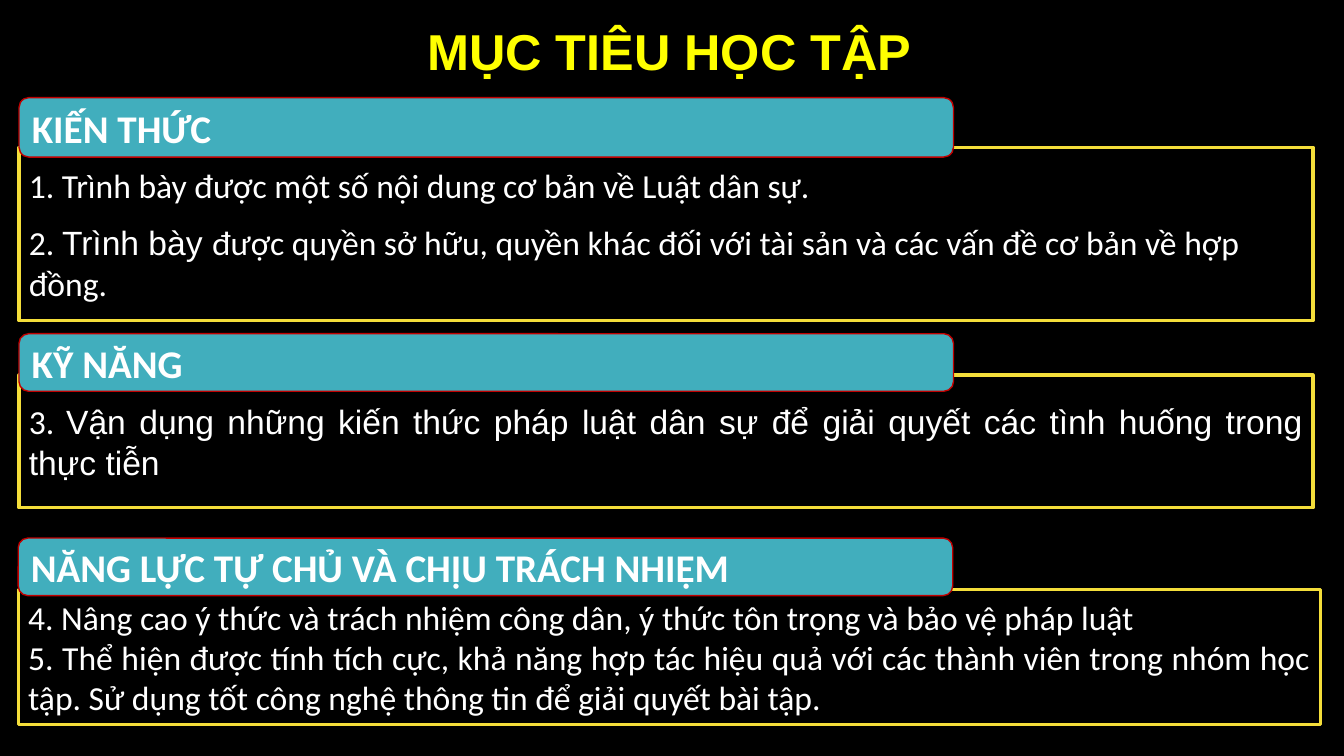
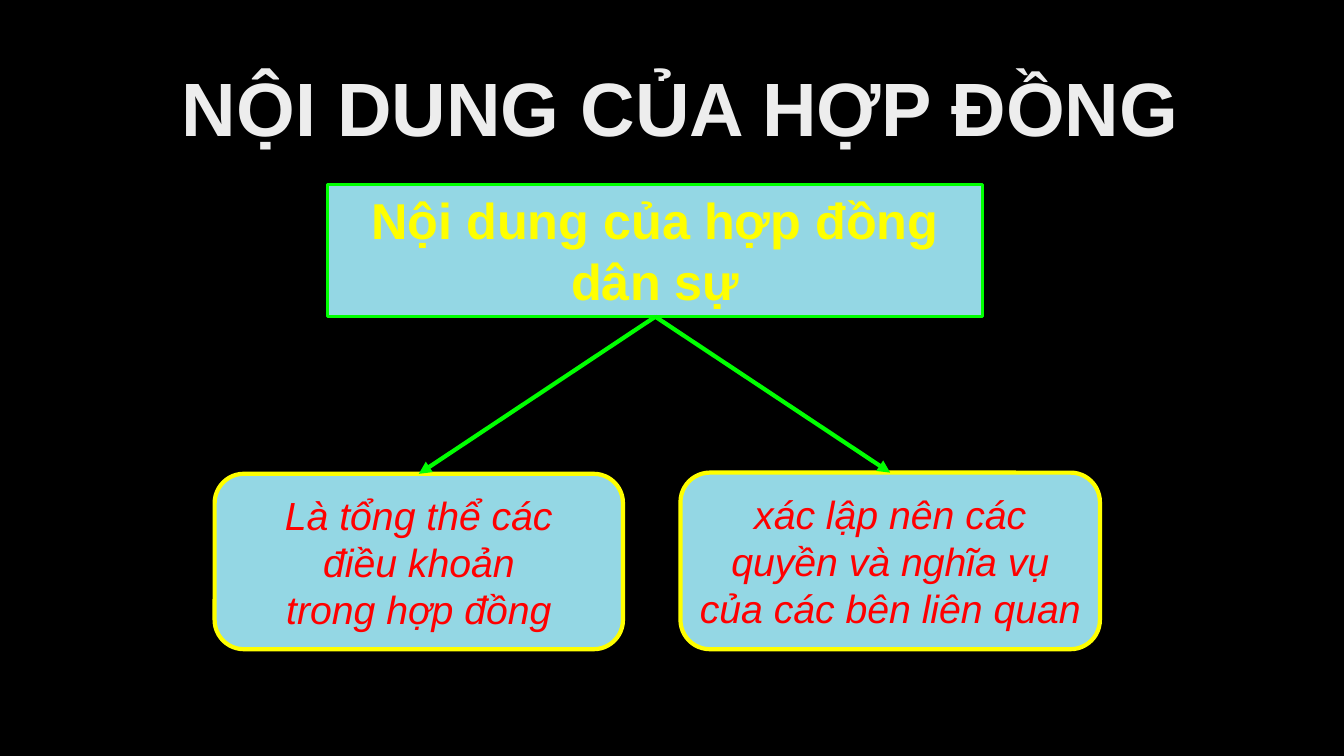
import dataclasses

import lxml.etree
import pptx
import pptx.dml.color
import pptx.enum.shapes
import pptx.enum.text
import pptx.oxml.ns
import pptx.util

Cm, Pt = pptx.util.Cm, pptx.util.Pt
ALIGN = pptx.enum.text.PP_ALIGN
ANCHOR = pptx.enum.text.MSO_ANCHOR
SHAPE = pptx.enum.shapes.MSO_SHAPE
TITLE_ONLY = 5


@dataclasses.dataclass(frozen=True)
class Theme:
    background: str = "000000"
    white: str = "FFFFFF"
    silver: str = "EDEDED"
    yellow: str = "FFFF00"
    gold: str = "F4DE3A"
    teal: str = "41AEBD"
    dark_red: str = "C00000"
    red: str = "FF0000"
    light_blue: str = "94D7E4"
    green: str = "00FF00"
    heading_font: str = "Arial"
    body_font: str = "Calibri"
    large_title: int = 54
    title: int = 36
    label: int = 28
    body: int = 24


THEME = Theme()


def rgb(value):
    return pptx.dml.color.RGBColor.from_string(value)


def write_text(tf, paragraphs, *, size, color, font=THEME.body_font, bold=False,
               italic=False, align=ALIGN.LEFT, anchor=ANCHOR.MIDDLE, wrap=True,
               gap=0, line_spacing=None):
    """Each paragraph is a list of runs: a string, or a (string, font) pair."""
    tf.word_wrap = wrap
    tf.vertical_anchor = anchor
    for i, runs in enumerate(paragraphs):
        p = tf.add_paragraph() if i else tf.paragraphs[0]
        p.alignment = align
        p.space_before = Pt(gap if i else 0)
        p.space_after = Pt(gap)
        if line_spacing:
            p.line_spacing = line_spacing
        for run in runs:
            text, run_font = (run, font) if isinstance(run, str) else run
            r = p.add_run()
            r.text = text
            r.font.name, r.font.size = run_font, Pt(size)
            r.font.bold, r.font.italic = bold, italic
            r.font.color.rgb = rgb(color)


def add_box(s, kind, box, line, width, fill=None):
    sp = s.shapes.add_shape(kind, *map(Cm, box))
    sp.shadow.inherit = False
    if fill:
        sp.fill.solid()
        sp.fill.fore_color.rgb = rgb(fill)
    else:
        sp.fill.background()
    sp.line.color.rgb = rgb(line)
    sp.line.width = Pt(width)
    return sp


def add_arrow(s, parent, child):
    """Arrow from the bottom of the parent to the top of the child."""
    line = s.shapes.add_connector(pptx.enum.shapes.MSO_CONNECTOR.STRAIGHT, 0, 0, 0, 0)
    line.begin_connect(parent, 2)
    line.end_connect(child, 0)
    line.line.color.rgb = rgb(THEME.green)
    line.line.width = Pt(3)
    qn = pptx.oxml.ns.qn
    lxml.etree.SubElement(line.line._get_or_add_ln(), qn("a:tailEnd"), type="triangle")
    lxml.etree.SubElement(line._element.spPr, qn("a:effectLst"))


def add_titled_slide(prs, title, box, size, color):
    s = prs.slides.add_slide(prs.slide_layouts[TITLE_ONLY])
    sp = s.shapes.title
    sp.left, sp.top, sp.width, sp.height = map(Cm, box)
    write_text(sp.text_frame, [[title]], size=size, color=color, bold=True,
               font=THEME.heading_font, align=ALIGN.CENTER, line_spacing=0.9)
    return s


def add_objective(s, box, overlap, heading, paragraphs, tab_height=1.45, **text_format):
    """Framed text with a heading tab overlapping its top edge."""
    left, top, _, _ = box
    frame = add_box(s, SHAPE.RECTANGLE, box, THEME.gold, 2.25)
    write_text(frame.text_frame, paragraphs, size=THEME.body, color=THEME.white,
               **text_format)
    tab_box = (left, top + overlap - tab_height, 23.55, tab_height)
    tab = add_box(s, SHAPE.ROUNDED_RECTANGLE, tab_box, THEME.dark_red, 1, THEME.teal)
    write_text(tab.text_frame, [[heading]], size=THEME.label, color=THEME.white, bold=True)


def build_objectives(prs):
    s = add_titled_slide(prs, "MỤC TIÊU HỌC TẬP", (2.34, 0.48, 29.06, 1.75),
                         THEME.title, THEME.yellow)
    arial = THEME.heading_font

    # Knowledge
    add_objective(s, (0.48, 3.71, 32.61, 4.37), 0.25, "KIẾN THỨC", [
        ["1. Trình bày được một số nội dung cơ bản về Luật dân sự."],
        ["2. ", ("Trình bày ", arial), "được quyền sở hữu, quyền khác đối với tài sản "
         "và các vấn đề cơ bản về hợp đồng."],
    ], tab_height=1.5, gap=6)

    # Skills
    add_objective(s, (0.48, 9.45, 32.61, 3.35), 0.41, "KỸ NĂNG", [
        ["3. ", ("Vận dụng những kiến thức pháp luật dân sự để giải quyết "
                 "các tình huống trong thực tiễn", arial)],
    ], align=ALIGN.JUSTIFY)

    # Autonomy and responsibility
    add_objective(s, (0.46, 14.86, 32.82, 3.4), 0.15, "NĂNG LỰC TỰ CHỦ VÀ CHỊU TRÁCH NHIỆM", [
        ["4. Nâng cao ý thức và trách nhiệm công dân, ý thức tôn trọng và bảo vệ pháp luật"],
        ["5. Thể hiện được tính tích cực, khả năng hợp tác hiệu quả với các thành viên "
         "trong nhóm học tập. Sử dụng tốt công nghệ thông tin để giải quyết bài tập."],
    ], align=ALIGN.JUSTIFY)


def add_branch(s, root, box, lines):
    """Rounded box below the root, joined to it by an arrow."""
    sp = add_box(s, SHAPE.ROUNDED_RECTANGLE, box, THEME.yellow, 3, THEME.light_blue)
    write_text(sp.text_frame, [[line] for line in lines], size=THEME.label,
               color=THEME.red, font=THEME.heading_font, italic=True,
               align=ALIGN.CENTER, wrap=False)
    add_arrow(s, root, sp)


def build_contract_content(prs):
    s = add_titled_slide(prs, "NỘI DUNG CỦA HỢP ĐỒNG", (2.54, 0.97, 29.21, 3.68),
                         THEME.large_title, THEME.silver)

    # Root of the diagram
    root = add_box(s, SHAPE.RECTANGLE, (8.26, 4.65, 16.51, 3.33), THEME.green, 2.25,
                   THEME.light_blue)
    write_text(root.text_frame, [["Nội dung của hợp đồng dân sự"]], size=THEME.title,
               color=THEME.yellow, font=THEME.heading_font, bold=True,
               align=ALIGN.CENTER, anchor=ANCHOR.TOP)

    # Branches
    add_branch(s, root, (5.41, 11.94, 10.29, 4.42),
               ["Là tổng thể các", "điều khoản", "trong hợp đồng"])
    add_branch(s, root, (17.15, 11.91, 10.57, 4.45),
               ["xác lập nên các", "quyền và nghĩa vụ", "của các bên liên quan"])


def main():
    prs = pptx.Presentation()
    prs.slide_width, prs.slide_height = Cm(33.87), Cm(19.05)
    fill = prs.slide_master.background.fill
    fill.solid()
    fill.fore_color.rgb = rgb(THEME.background)
    build_objectives(prs)
    build_contract_content(prs)
    prs.save("out.pptx")


if __name__ == "__main__":
    main()
